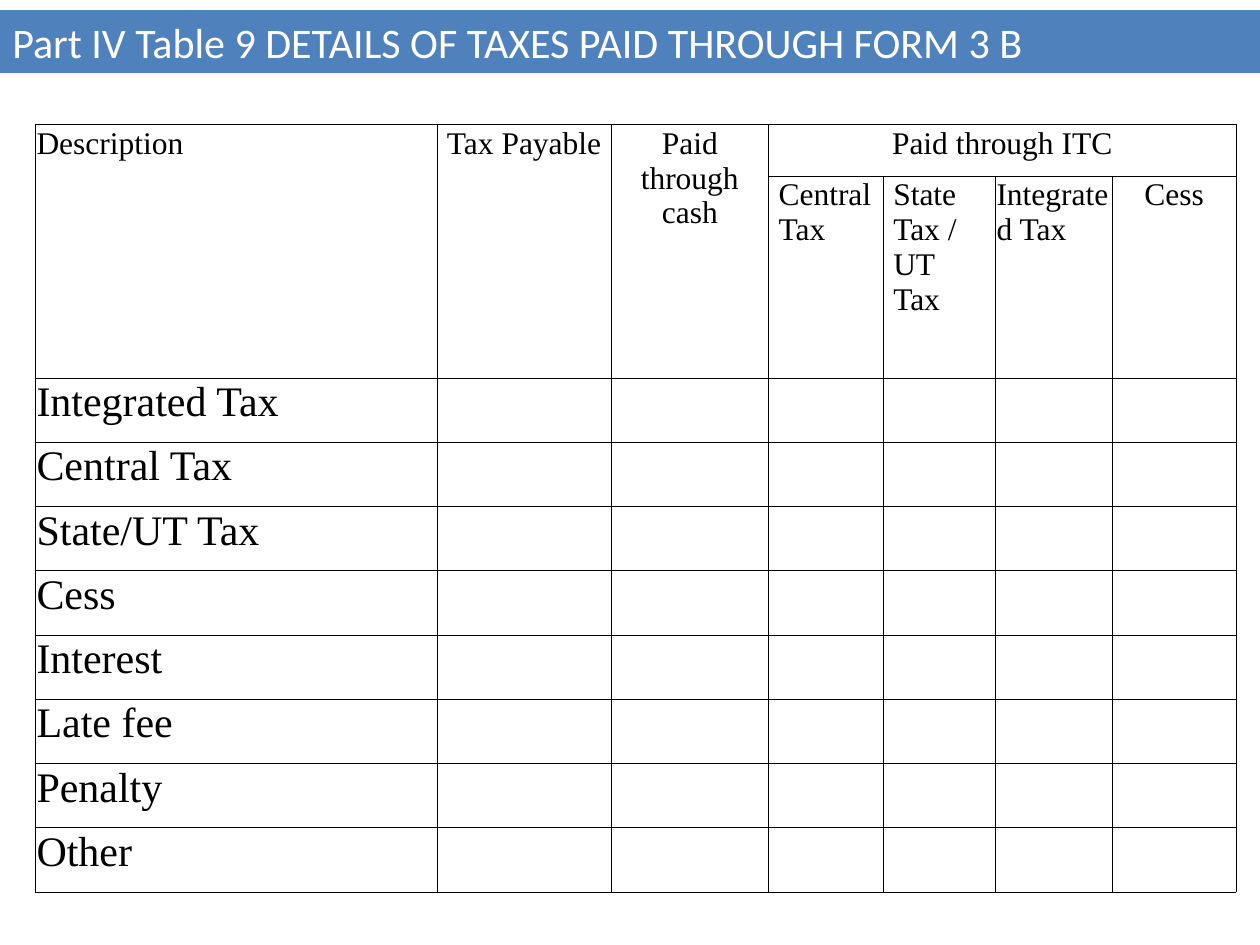
from lxml import etree
from pptx import Presentation
from pptx.dml.color import RGBColor
from pptx.enum.shapes import MSO_SHAPE
from pptx.enum.text import MSO_ANCHOR, MSO_AUTO_SIZE, PP_ALIGN
from pptx.oxml import parse_xml
from pptx.util import Inches, Pt

BLACK, WHITE, BLUE = "000000", "FFFFFF", "4F81BD"
A_NS = "http://schemas.openxmlformats.org/drawingml/2006/main"

COL_WIDTHS = [3.19, 1.38, 1.25, 0.91, 0.89, 0.93, 0.98]
HEADER_HEIGHTS = [0.41, 1.6]
ROW_HEIGHT = 0.51
TAX_ROWS = ["Integrated Tax", "Central Tax", "State/UT Tax", "Cess",
            "Interest", "Late fee", "Penalty", "Other"]

# Row, column, text, alignment, left inset
HEADERS = [
    (0, 0, "Description", PP_ALIGN.LEFT, 0.01),
    (0, 1, "Tax Payable", PP_ALIGN.CENTER, 0.01),
    (0, 2, "Paid through cash", PP_ALIGN.CENTER, 0.01),
    (0, 3, "Paid through ITC", PP_ALIGN.CENTER, 0.01),
    (1, 3, "Central Tax", PP_ALIGN.LEFT, 0.08),
    (1, 4, "State Tax / UT\vTax", PP_ALIGN.LEFT, 0.08),
    (1, 5, "Integrated Tax", PP_ALIGN.LEFT, 0.01),
    (1, 6, "Cess", PP_ALIGN.CENTER, 0.01),
]


def rgb(color):
    return RGBColor.from_string(color)


def set_text(tf, text, size=18, font="Times New Roman", color=BLACK,
             align=PP_ALIGN.LEFT):
    p = tf.paragraphs[0]
    p.text = text  # a vertical tab becomes a line break
    p.alignment = align
    for r in p.runs:
        r.font.size = Pt(size)
        r.font.name = font
        r.font.color.rgb = rgb(color)


def add_title_bar(slide, text):
    s = slide.shapes.add_shape(MSO_SHAPE.RECTANGLE, 0, Inches(0.08),
                               Inches(10), Inches(0.5))
    s.shadow.inherit = False
    s.fill.solid()
    s.fill.fore_color.rgb = rgb(BLUE)
    s.line.fill.background()
    tf = s.text_frame
    tf.word_wrap = True
    tf.auto_size = MSO_AUTO_SIZE.SHAPE_TO_FIT_TEXT
    tf.vertical_anchor = MSO_ANCHOR.MIDDLE
    set_text(tf, text, size=24, font="Calibri", color=WHITE)


def set_borders(cell, color=BLACK, width=0.5):
    props = cell._tc.get_or_add_tcPr()
    for i, side in enumerate(("lnL", "lnR", "lnT", "lnB")):
        props.insert(i, parse_xml(
            f'<a:{side} xmlns:a="{A_NS}" w="{Pt(width)}"><a:solidFill>'
            f'<a:srgbClr val="{color}"/></a:solidFill></a:{side}>'))


def fill_cell(cell, text, left=0.01, **text_format):
    cell.margin_left = Inches(left)
    cell.margin_top = cell.margin_right = Inches(0.01)
    cell.margin_bottom = 0
    set_text(cell.text_frame, text, **text_format)


def add_tax_table(slide):
    heights = HEADER_HEIGHTS + [ROW_HEIGHT] * len(TAX_ROWS)
    table = slide.shapes.add_table(
        len(heights), len(COL_WIDTHS), Inches(0.28), Inches(0.99),
        Inches(sum(COL_WIDTHS)), Inches(sum(heights))).table
    table.first_row = table.horz_banding = False
    for col, width in zip(table.columns, COL_WIDTHS):
        col.width = Inches(width)
    for row, height in zip(table.rows, heights):
        row.height = Inches(height)

    # Plain cells with thin rules
    for cell in table.iter_cells():
        cell.fill.background()
        set_borders(cell)

    # Two-level header
    for c in range(3):
        table.cell(0, c).merge(table.cell(1, c))
    table.cell(0, 3).merge(table.cell(0, 6))
    for r, c, text, align, left in HEADERS:
        fill_cell(table.cell(r, c), text, left, align=align)

    # Row labels
    for r, label in enumerate(TAX_ROWS, start=len(HEADER_HEIGHTS)):
        fill_cell(table.cell(r, 0), label, size=24)


def main():
    prs = Presentation()
    prs.slide_width, prs.slide_height = Inches(10), Inches(7.5)
    slide = prs.slides.add_slide(prs.slide_layouts[6])
    add_title_bar(slide, "Part IV Table 9 DETAILS OF TAXES PAID THROUGH FORM 3 B")
    add_tax_table(slide)
    prs.save("out.pptx")


if __name__ == "__main__":
    main()
